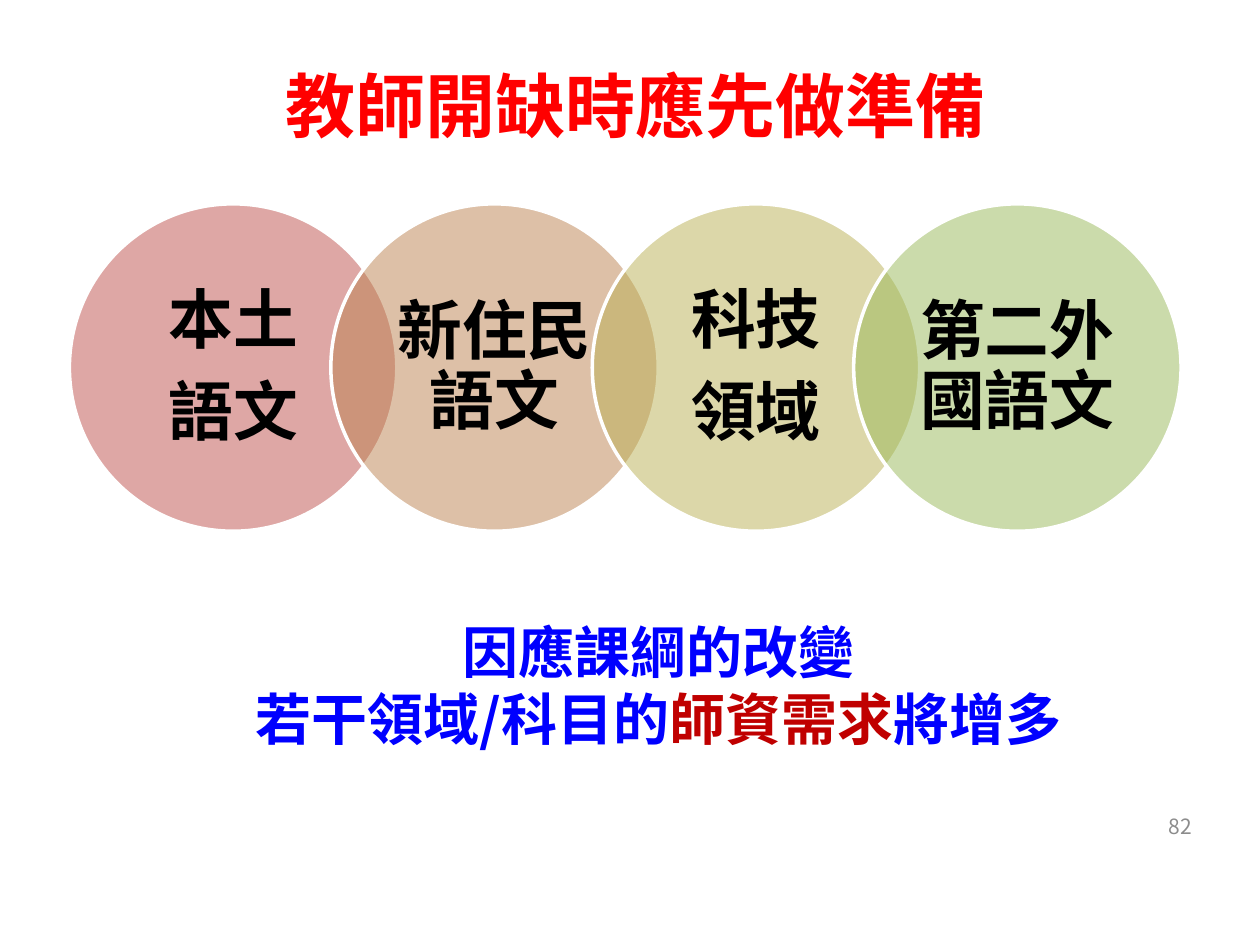
from dataclasses import dataclass

import lxml.etree
import pptx
import pptx.dml.color
import pptx.enum.shapes
import pptx.enum.text
import pptx.oxml.ns
import pptx.util
from pptx.util import Cm, Pt

FONT = "Noto Sans CJK SC"
COLOURS = {
    "title": "FF0000",
    "body": "0000FF",
    "emphasis": "C00000",
    "label": "000000",
    "number": "8C8C8C",
    "outline": "FFFFFF",
}
ALIGN = pptx.enum.text.PP_ALIGN
MIDDLE = pptx.enum.text.MSO_ANCHOR.MIDDLE

CIRCLE_LEFT, CIRCLE_TOP = 1.4, 4.11
CIRCLE_SIZE, CIRCLE_STEP = 6.6, 5.27


@dataclass
class Subject:
    lines: list[str]
    fill: str


SUBJECTS = [
    Subject(["本土", "語文"], "BF504D"),
    Subject(["新住民語文"], "BC8250"),
    Subject(["科技", "領域"], "BBB054"),
    Subject(["第二外國語文"], "99B958"),
]
MESSAGE = [
    [("因應課綱的改變", "body")],
    [("若干領域/科目的", "body"), ("師資需求", "emphasis"), ("將增多", "body")],
]


def rgb(value: str) -> pptx.dml.color.RGBColor:
    return pptx.dml.color.RGBColor.from_string(value)


def place(shape, left: float, top: float, width: float, height: float) -> None:
    """Move and size a shape, in centimetres."""
    shape.left, shape.top = Cm(left), Cm(top)
    shape.width, shape.height = Cm(width), Cm(height)


def format_para(para, size: float, colour: str, align, bold: bool = True) -> None:
    para.alignment = align
    para.font.name = FONT
    para.font.size = Pt(size)
    para.font.bold = bold
    para.font.color.rgb = rgb(COLOURS[colour])


def set_opacity(shape, percent: int) -> None:
    colour = shape.fill._xPr.find(".//" + pptx.oxml.ns.qn("a:srgbClr"))
    alpha = lxml.etree.SubElement(colour, pptx.oxml.ns.qn("a:alpha"))
    alpha.set("val", str(percent * 1000))


def add_title(page) -> None:
    title = page.shapes.title
    place(title, 5.51, 1.12, 15.01, 1.96)
    title.text_frame.text = "教師開缺時應先做準備"
    format_para(title.text_frame.paragraphs[0], 40, "title", ALIGN.LEFT)


def add_message(page) -> None:
    body = page.placeholders[1]
    place(body, 1.96, 12.32, 22.63, 3.38)
    frame = body.text_frame
    for index, spans in enumerate(MESSAGE):
        para = frame.paragraphs[0] if index == 0 else frame.add_paragraph()
        properties = para._p.get_or_add_pPr()
        properties.set("marL", str(Cm(0.95)))
        properties.set("indent", str(Cm(-0.95)))
        lxml.etree.SubElement(properties, pptx.oxml.ns.qn("a:buNone"))
        para.space_before = Pt(0)
        para.line_spacing = Pt(38.4)
        format_para(para, 32, "body", ALIGN.CENTER)
        for text, colour in spans:
            span = para.add_run()
            span.text = text
            span.font.color.rgb = rgb(COLOURS[colour])


def add_circle(page, subject: Subject, left: float) -> None:
    circle = page.shapes.add_shape(
        pptx.enum.shapes.MSO_SHAPE.OVAL,
        Cm(left), Cm(CIRCLE_TOP), Cm(CIRCLE_SIZE), Cm(CIRCLE_SIZE),
    )
    circle.shadow.inherit = False
    circle.fill.solid()
    circle.fill.fore_color.rgb = rgb(subject.fill)
    set_opacity(circle, 50)
    circle.line.color.rgb = rgb(COLOURS["outline"])
    circle.line.width = Pt(2)
    frame = circle.text_frame
    frame.word_wrap = True
    frame.vertical_anchor = MIDDLE
    frame.margin_left = frame.margin_right = Cm(0.3)
    for index, line in enumerate(subject.lines):
        para = frame.paragraphs[0] if index == 0 else frame.add_paragraph()
        para.text = line
        para.line_spacing = Pt(40)
        para.space_before = Pt(13 if index else 0)
        format_para(para, 37, "label", ALIGN.CENTER)


def add_page_number(page) -> None:
    box = page.shapes.add_textbox(Cm(22.58), Cm(15.93), Cm(1.7), Cm(1.45))
    box.text_frame.word_wrap = True
    box.text_frame.vertical_anchor = MIDDLE
    box.text_frame.text = "82"
    format_para(box.text_frame.paragraphs[0], 12, "number", ALIGN.RIGHT, bold=False)


def main() -> None:
    deck = pptx.Presentation()
    deck.slide_width, deck.slide_height = Cm(25.4), Cm(19.05)
    page = deck.slides.add_slide(deck.slide_layouts[1])
    add_title(page)
    add_message(page)
    for index, subject in enumerate(SUBJECTS):
        add_circle(page, subject, CIRCLE_LEFT + index * CIRCLE_STEP)
    add_page_number(page)
    deck.save("out.pptx")


if __name__ == "__main__":
    main()
